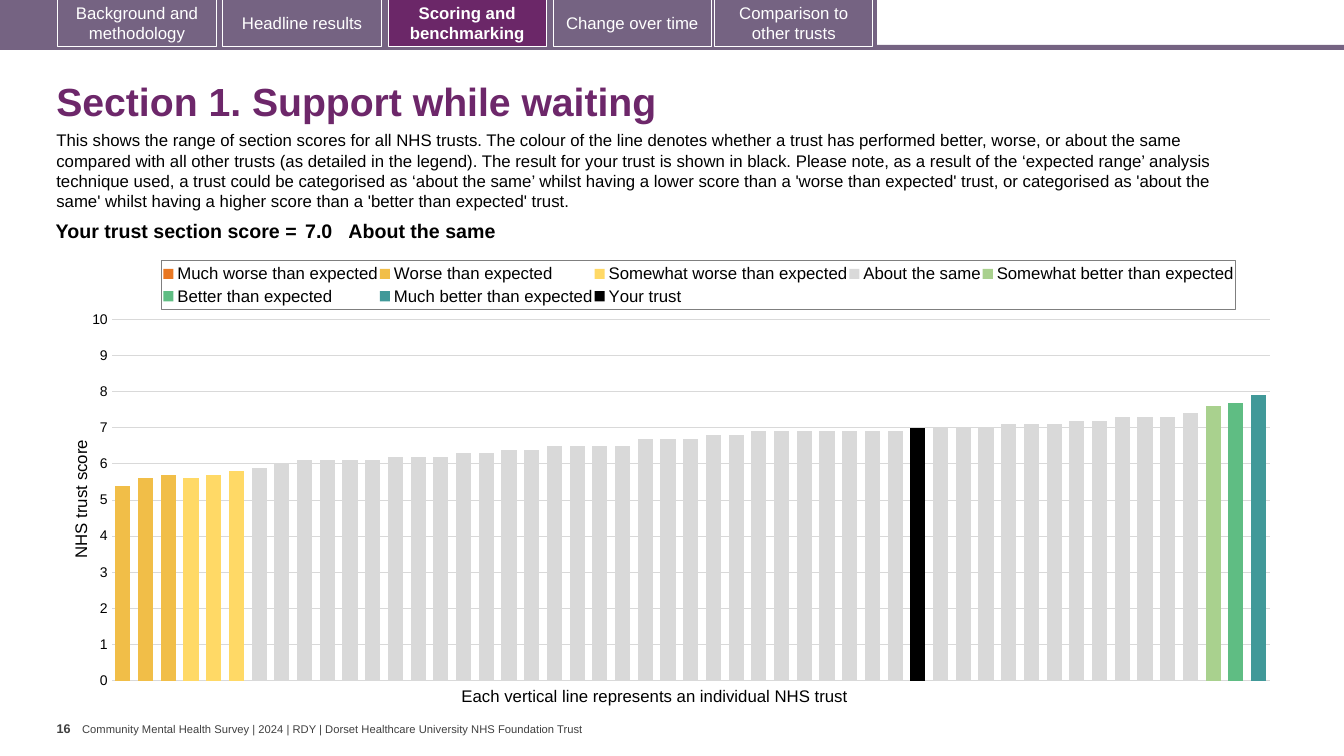
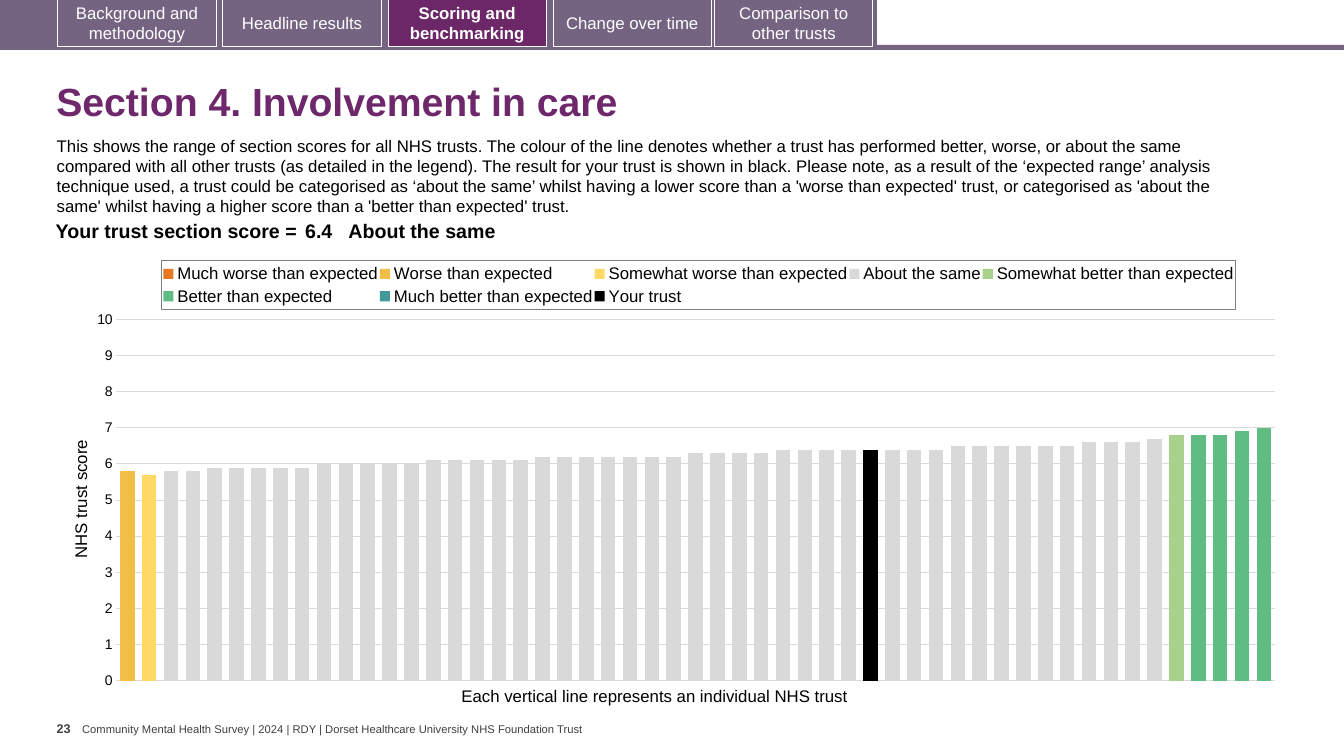
import copy

import pptx
import pptx.chart.data
import pptx.dml.color
import pptx.enum.chart
import pptx.enum.shapes
import pptx.enum.text
import pptx.oxml
import pptx.oxml.ns
import pptx.util

Cm, Pt = pptx.util.Cm, pptx.util.Pt
Align = pptx.enum.text.PP_ALIGN
Anchor = pptx.enum.text.MSO_ANCHOR
qn = pptx.oxml.ns.qn

# Shared look
FACE = "Arial"
PURPLE, MAUVE, WHITE = "6D276A", "756382", "FFFFFF"
BLACK, GREY, GRID, EDGE = "000000", "404040", "D9D9D9", "7F7F7F"

TABS = [
    (1.46, "Background and methodology"),
    (5.62, "Headline results"),
    (9.78, "Scoring and benchmarking"),
    (13.94, "Change over time"),
    (18.01, "Comparison to other trusts"),
]
ACTIVE = "Scoring and benchmarking"
FOOTER = ("Community Mental Health Survey | 2024 | RDY | "
          "Dorset Healthcare University NHS Foundation Trust")
INTRO = (
    "This shows the range of section scores for all NHS trusts. The colour of "
    "the line denotes whether a trust has performed better, worse, or about "
    "the same compared with all other trusts (as detailed in the legend). The "
    "result for your trust is shown in black. Please note, as a result of the "
    "‘expected range’ analysis technique used, a trust could be categorised "
    "as ‘about the same’ whilst having a lower score than a 'worse than "
    "expected' trust, or categorised as 'about the same' whilst having a "
    "higher score than a 'better than expected' trust."
)

# Score bands, from worst to best
SAME, OWN = "About the same", "Your trust"
BANDS = {
    "Much worse than expected": "E87722",
    "Worse than expected": "F1BE48",
    "Somewhat worse than expected": "FFD966",
    SAME: "D9D9D9",
    "Somewhat better than expected": "A9D18E",
    "Better than expected": "5FBD83",
    "Much better than expected": "419999",
}

# Scores as (value, count) runs; "own" is the index of the trust's column
PAGES = [
    dict(
        page="16", title="Section 1. Support while waiting", score="7.0",
        own=35, intro=(1.17, 3.15), plot=0.036,
        scores={
            "Worse than expected": [(5.4, 1), (5.6, 1), (5.7, 1)],
            "Somewhat worse than expected": [(5.6, 1), (5.7, 1), (5.8, 1)],
            SAME: [(5.9, 1), (6, 1), (6.1, 4), (6.2, 3), (6.3, 2), (6.4, 2),
                   (6.5, 4), (6.7, 3), (6.8, 2), (6.9, 7), (7, 4), (7.1, 3),
                   (7.2, 2), (7.3, 3), (7.4, 1)],
            "Somewhat better than expected": [(7.6, 1)],
            "Better than expected": [(7.7, 1)],
            "Much better than expected": [(7.9, 1)],
        },
    ),
    dict(
        page="23", title="Section 4. Involvement in care", score="6.4",
        own=34, intro=(1.18, 3.28), plot=0.04,
        scores={
            "Worse than expected": [(5.8, 1)],
            "Somewhat worse than expected": [(5.7, 1)],
            SAME: [(5.8, 2), (5.9, 5), (6, 5), (6.1, 5), (6.2, 7), (6.3, 4),
                   (6.4, 8), (6.5, 6), (6.6, 3), (6.7, 1)],
            "Somewhat better than expected": [(6.8, 1)],
            "Better than expected": [(6.8, 2), (6.9, 1), (7, 1)],
        },
    ),
]


def tint(hexa):
    return pptx.dml.color.RGBColor.from_string(hexa)


def style(font, size=12, color=BLACK, bold=False):
    font.name, font.size, font.bold = FACE, Pt(size), bold
    font.color.rgb = tint(color)


def write(frame, text, align=Align.LEFT, lead=None, **look):
    frame.word_wrap = True
    para = frame.paragraphs[0]
    para.alignment = align
    if lead:
        para.line_spacing = lead
    run = para.add_run()
    run.text = text
    style(run.font, **look)


def label(slide, box, text, anchor=Anchor.TOP, inset=(0.25, 0.13), **look):
    frame = slide.shapes.add_textbox(*map(Cm, box)).text_frame
    frame.vertical_anchor = anchor
    frame.margin_left = frame.margin_right = Cm(inset[0])
    frame.margin_top = frame.margin_bottom = Cm(inset[1])
    write(frame, text, **look)


def block(slide, box, fill, line=None):
    shape = slide.shapes.add_shape(
        pptx.enum.shapes.MSO_SHAPE.RECTANGLE, *map(Cm, box))
    shape.shadow.inherit = False
    shape.fill.solid()
    shape.fill.fore_color.rgb = tint(fill)
    if line:
        shape.line.color.rgb = tint(line)
        shape.line.width = Pt(0.75)
    else:
        shape.line.fill.background()
    return shape


def base(slide, page):
    # Navigation band
    block(slide, (0, 1.13, 33.87, 0.13), MAUVE)
    block(slide, (0, 0, 22.1, 1.19), MAUVE)
    for left, text in TABS:
        live = text == ACTIVE
        tab = block(slide, (left, -0.02, 3.99, 1.19),
                    "6B2768" if live else MAUVE, WHITE)
        tab.text_frame.vertical_anchor = Anchor.MIDDLE
        write(tab.text_frame, text, align=Align.CENTER, color=WHITE, bold=live)
    # Footer
    label(slide, (2.07, 18.21, 12.78, 0.33), FOOTER, anchor=Anchor.MIDDLE,
          inset=(0, 0), size=8, color=GREY)
    label(slide, (1.43, 18.04, 0.64, 1), page, inset=(0, 0.13),
          size=9, color=GREY, bold=True)


def result(slide, score):
    cells = [("Your trust section score =", 6.68, Align.RIGHT, 0.1),
             (score, 1.19, Align.LEFT, 0.1),
             (SAME, 21.82, Align.LEFT, 0)]
    width = sum(cell[1] for cell in cells)
    table = slide.shapes.add_table(
        1, len(cells), Cm(0.91), Cm(5.46), Cm(width), Cm(0.79)).table
    table.first_row = table.horz_banding = False
    for col, (text, wide, align, side) in enumerate(cells):
        table.columns[col].width = Cm(wide)
        cell = table.cell(0, col)
        cell.fill.background()
        cell.margin_left = cell.margin_right = Cm(side)
        cell.margin_top = cell.margin_bottom = Cm(0.1)
        write(cell.text_frame, text, align=align, size=14, bold=True)


def node(body):
    spaces = pptx.oxml.ns.nsdecls("c", "a")
    tag, rest = body.split(">", 1)
    return pptx.oxml.parse_xml(f"{tag} {spaces}>{rest}")


def place(part, index, inner=False, **spots):
    """Give a chart part a manual layout, in shares of the chart."""
    for old in part.findall(qn("c:layout")):
        part.remove(old)
    aim = '<c:layoutTarget val="inner"/>' if inner else ""
    modes = "".join(f'<c:{key}Mode val="edge"/>' for key in "xy")
    sizes = "".join(f'<c:{key} val="{val}"/>' for key, val in spots.items())
    part.insert(index, node("<c:layout><c:manualLayout>" + aim + modes + sizes
                            + "</c:manualLayout></c:layout>"))


def split(area):
    """Move the last series to a second, unlabelled axis on the right."""
    bars = area.find(qn("c:barChart"))
    twin = copy.deepcopy(bars)
    for old in twin.findall(qn("c:ser"))[:-1]:
        twin.remove(old)
    bars.remove(bars.findall(qn("c:ser"))[-1])
    bars.addnext(twin)
    cat, val = area.find(qn("c:catAx")), area.find(qn("c:valAx"))
    right, base_ax = copy.deepcopy(val), copy.deepcopy(cat)
    val.addnext(right)
    right.addnext(base_ax)
    # Renumber the copied axes
    names = {cat.find(qn("c:axId")).get("val"): "5001",
             val.find(qn("c:axId")).get("val"): "5002"}
    for part in (twin, right, base_ax):
        for tag in ("c:axId", "c:crossAx"):
            for item in part.findall(qn(tag)):
                item.set("val", names[item.get("val")])
    for tag in ("c:majorGridlines", "c:title"):
        right.remove(right.find(qn(tag)))
    for tag, new in (("c:axPos", "r"), ("c:tickLblPos", "none"),
                     ("c:crosses", "max")):
        right.find(qn(tag)).set("val", new)


def spread(scores, own):
    """Return one (name, values) pair per series, blank outside its band."""
    lists = {name: [val for val, count in scores.get(name, [])
                    for _ in range(count)] for name in BANDS}
    every = sum(lists.values(), [])
    rows, start = [], 0
    for name, vals in lists.items():
        end = start + len(vals)
        rows.append((name, [None] * start + vals + [None] * (len(every) - end)))
        start = end
    rows.append((OWN, [val if pos == own else None
                       for pos, val in enumerate(every)]))
    return rows


def graph(slide, scores, own, left):
    rows = spread(scores, own)
    data = pptx.chart.data.CategoryChartData()
    data.categories = [str(num + 1) for num in range(len(rows[0][1]))]
    for name, vals in rows:
        data.add_series(name, vals)
    chart = slide.shapes.add_chart(
        pptx.enum.chart.XL_CHART_TYPE.COLUMN_CLUSTERED,
        Cm(1.7), Cm(6.27), Cm(30.86), Cm(11.28), data).chart
    chart.has_title = False
    style(chart.font, size=10)

    # Columns
    plot = chart.plots[0]
    plot.gap_width, plot.overlap = 50, 100
    plot.vary_by_categories = False
    for series in plot.series:
        series.invert_if_negative = False
        series.format.fill.solid()
        series.format.fill.fore_color.rgb = tint(BANDS.get(series.name, BLACK))
    area = chart._chartSpace.find(".//" + qn("c:plotArea"))
    place(area, 0, inner=True, x=left, y=0.158, w=0.946, h=0.807)

    # Axes
    chart.category_axis.visible = False
    axis = chart.value_axis
    axis.minimum_scale, axis.maximum_scale, axis.major_unit = 0, 10, 1
    axis.major_tick_mark = pptx.enum.chart.XL_TICK_MARK.NONE
    axis.format.line.fill.background()
    axis.major_gridlines.format.line.color.rgb = tint(GRID)
    axis.major_gridlines.format.line.width = Pt(0.75)
    style(axis.tick_labels.font, size=10)
    write(axis.axis_title.text_frame, "NHS trust score")
    title = axis.axis_title._element
    title.find(".//" + qn("a:bodyPr")).set("rot", "-5400000")
    place(title, 1, x=0, y=0.42)
    split(area)

    # Legend
    chart.has_legend = True
    legend = chart.legend
    legend.position = pptx.enum.chart.XL_LEGEND_POSITION.TOP
    legend.include_in_layout = False
    style(legend.font)
    key = legend._element
    place(key, 1, x=0.077, y=0.026, w=0.877, h=0.11)
    key.find(qn("c:overlay")).addnext(node(
        '<c:spPr><a:ln w="9525"><a:solidFill>'
        f'<a:srgbClr val="{EDGE}"/></a:solidFill></a:ln></c:spPr>'))


def build(slide, page, title, score, own, intro, plot, scores):
    base(slide, page)
    label(slide, (1.17, 1.7, 31.72, 1.83), title, anchor=Anchor.MIDDLE,
          lead=0.9, size=28, color=PURPLE, bold=True)
    label(slide, (*intro, 30.81, 2.31), INTRO)
    label(slide, (11.38, 17.15, 10.44, 0.76),
          "Each vertical line represents an individual NHS trust")
    graph(slide, scores, own, plot)
    result(slide, score)


def main():
    deck = pptx.Presentation()
    deck.slide_width, deck.slide_height = Cm(33.87), Cm(19.05)
    for page in PAGES:
        build(deck.slides.add_slide(deck.slide_layouts[6]), **page)
    deck.save("out.pptx")


if __name__ == "__main__":
    main()
